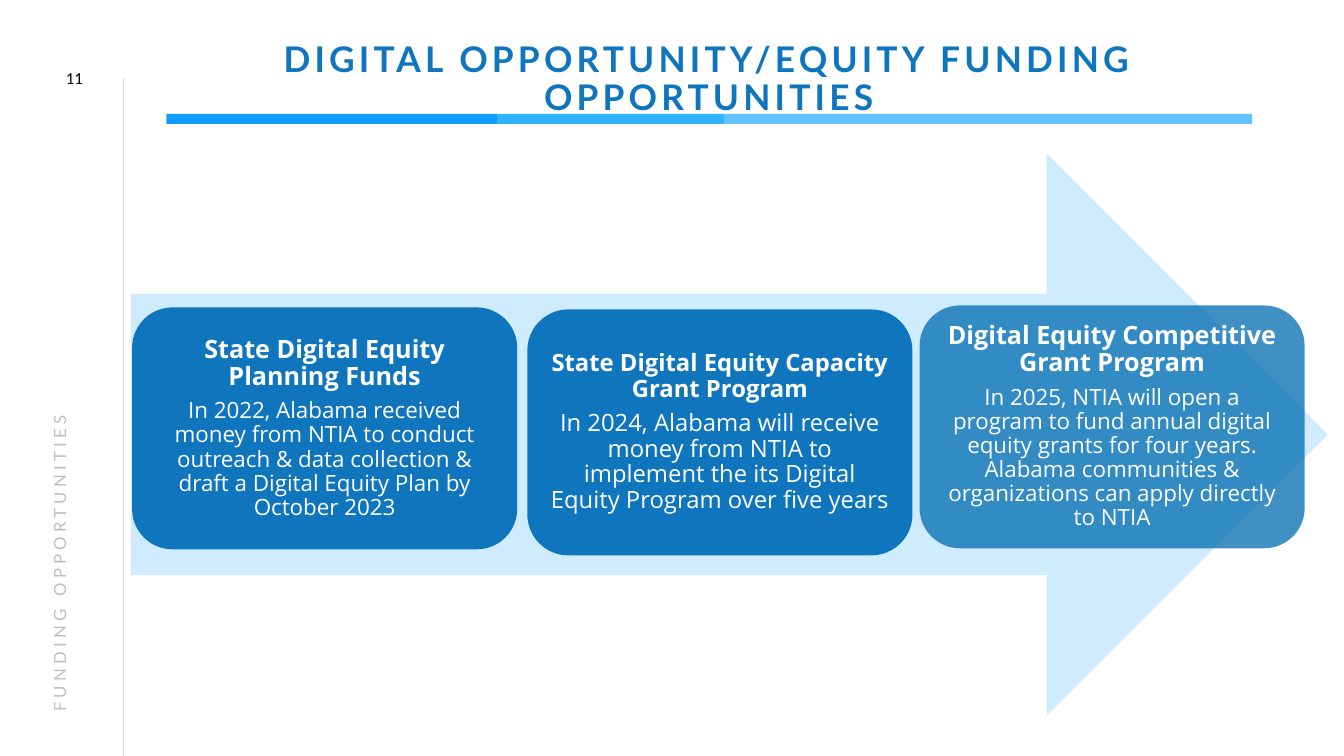
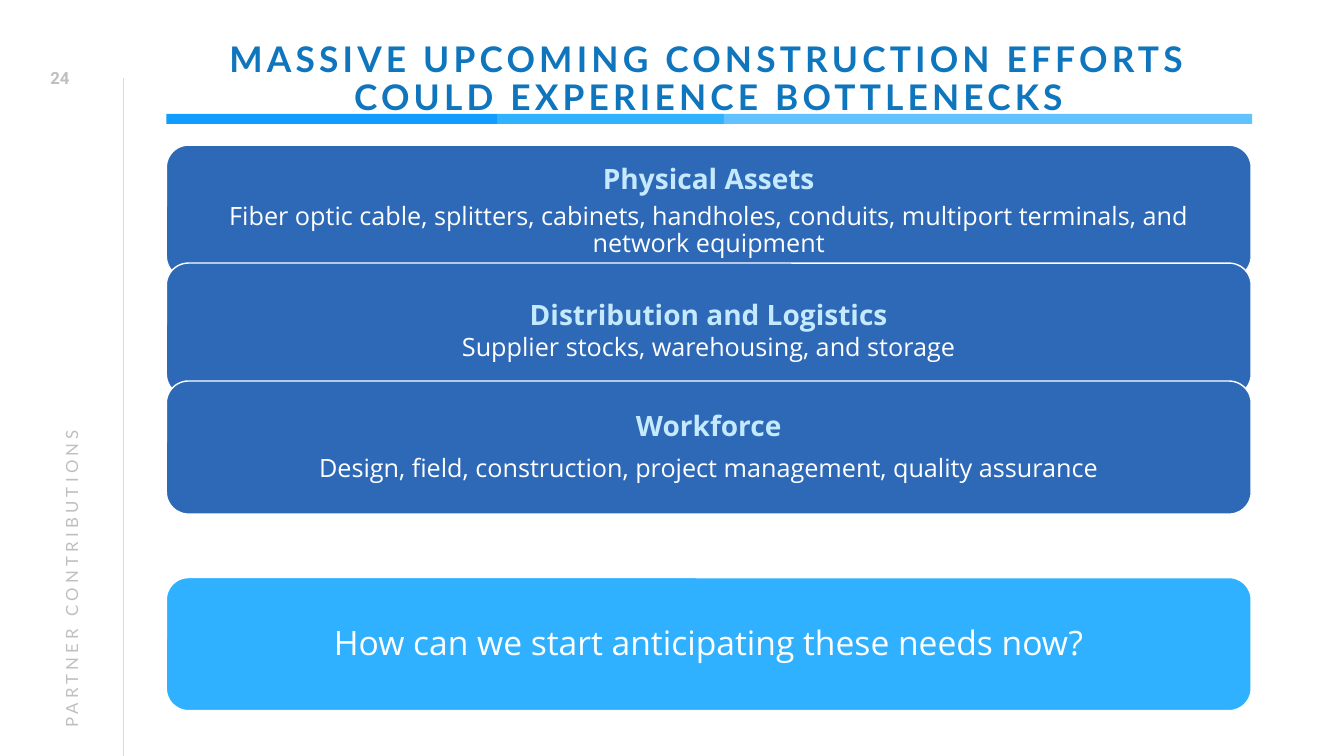
"""Build two slides on digital equity funding and construction bottlenecks."""
import pptx
import pptx.util
import pptx.dml.color
import pptx.enum.shapes
import pptx.enum.text
import pptx.oxml
import pptx.oxml.ns

Inches = pptx.util.Inches
Pt = pptx.util.Pt
RGBColor = pptx.dml.color.RGBColor
SHAPE = pptx.enum.shapes.MSO_SHAPE
ALIGN = pptx.enum.text.PP_ALIGN
ANCHOR = pptx.enum.text.MSO_ANCHOR
qn = pptx.oxml.ns.qn

WHITE = RGBColor(0xFF, 0xFF, 0xFF)
BLACK = RGBColor(0x00, 0x00, 0x00)
RULE_GRAY = RGBColor(0xD9, 0xD9, 0xD9)
LABEL_GRAY = RGBColor(0xBF, 0xBF, 0xBF)
TITLE_BLUE = RGBColor(0x0F, 0x75, 0xBC)
DEEP_BLUE = RGBColor(0x00, 0x6B, 0xB0)
ARROW_BLUE = RGBColor(0xCF, 0xEB, 0xFF)
BAR_BLUE = RGBColor(0x2D, 0x69, 0xB6)
QUESTION_BLUE = RGBColor(0x30, 0xB1, 0xFF)
HEADING_BLUE = RGBColor(0xC5, 0xEA, 0xFF)
BANDS = [
    (1.65, 3.28, RGBColor(0x11, 0x9D, 0xFF)),
    (4.93, 2.25, RGBColor(0x31, 0xB2, 0xFF)),
    (7.18, 5.24, RGBColor(0x62, 0xC1, 0xFF)),
]


def add_block(slide, preset, box, color, outline=None):
    """Add a filled preset shape without shadow."""
    shape = slide.shapes.add_shape(preset, *map(Inches, box))
    shape.shadow.inherit = False
    shape.fill.solid()
    shape.fill.fore_color.rgb = color
    if outline is None:
        shape.line.fill.background()
    else:
        shape.line.color.rgb = outline
        shape.line.width = Pt(1)
    return shape


def write_text(shape, lines, font_name, align, margins, anchor=ANCHOR.MIDDLE,
               spacing=None, gap=0, tracking=0):
    """Write (text, size, color, bold) lines, with a gap between paragraphs."""
    frame = shape.text_frame
    frame.word_wrap = True
    frame.vertical_anchor = anchor
    frame.margin_left, frame.margin_top, frame.margin_right, frame.margin_bottom = map(Inches, margins)
    frame.text = "\n".join(line[0] for line in lines)
    for index, (paragraph, line) in enumerate(zip(frame.paragraphs, lines)):
        paragraph.alignment = align
        paragraph.space_before = Pt(0)
        paragraph.space_after = Pt(gap if index < len(lines) - 1 else 0)
        if spacing:
            paragraph.line_spacing = spacing
        font = paragraph.runs[0].font
        font.name = font_name
        font.size, font.color.rgb, font.bold = Pt(line[1]), line[2], line[3]
    if tracking:
        for properties in shape.element.iter(qn("a:rPr")):
            properties.set("spc", str(tracking * 100))


presentation = pptx.Presentation()
presentation.slide_width = Inches(13.33)
presentation.slide_height = Inches(7.5)
title_layout = presentation.slide_layouts[5]

TEXT_MARGINS = (0.1, 0.05, 0.1, 0.05)
pages = [
    {
        "title": "DIGITAL OPPORTUNITY/EQUITY FUNDING OPPORTUNITIES",
        "number": ("11", 12, BLACK, False), "number_font": "Calibri", "number_align": ALIGN.RIGHT,
        "section": "FUNDING OPPORTUNITIES", "section_at": (-2.42, 3.95), "section_anchor": ANCHOR.MIDDLE,
    },
    {
        "title": "MASSIVE UPCOMING CONSTRUCTION EFFORTS COULD EXPERIENCE BOTTLENECKS",
        "number": ("24", 12, LABEL_GRAY, True), "number_font": "Roboto", "number_align": ALIGN.CENTER,
        "section": "PARTNER CONTRIBUTIONS", "section_at": (-2.25, 4.11), "section_anchor": ANCHOR.TOP,
    },
]
slides = []
for page in pages:
    slide = presentation.slides.add_slide(title_layout)
    slides.append(slide)

    margin_rule = slide.shapes.add_connector(
        pptx.enum.shapes.MSO_CONNECTOR.STRAIGHT, Inches(1.22), Inches(7.5), Inches(1.22), Inches(0.77))
    margin_rule.line.color.rgb = RULE_GRAY
    margin_rule.line.width = Pt(0.5)
    margin_rule.element.spPr.append(pptx.oxml.parse_xml(
        f'<a:effectLst {pptx.oxml.ns.nsdecls("a")}/>'))
    for left, width, color in BANDS:
        add_block(slide, SHAPE.RECTANGLE, (left, 1.13, width, 0.1), color)

    title = slide.shapes.title
    title.left, title.top, title.width, title.height = map(Inches, (1.65, 0.4, 10.76, 0.74))
    write_text(title, [(page["title"], 25.2, TITLE_BLUE, True)], "Lato", ALIGN.CENTER,
               (0, 0.05, 0, 0), spacing=0.9, tracking=3)
    title.text_frame.auto_size = pptx.enum.text.MSO_AUTO_SIZE.NONE

    number = slide.shapes.add_textbox(*map(Inches, (0.27, 0.57, 0.65, 0.4)))
    write_text(number, [page["number"]], page["number_font"], page["number_align"], TEXT_MARGINS)

    section = slide.shapes.add_textbox(*map(Inches, (*page["section_at"], 6.02, 0.4)))
    section.rotation = 270
    write_text(section, [(page["section"], 12, LABEL_GRAY, False)], "Lato", ALIGN.LEFT,
               TEXT_MARGINS, page["section_anchor"], tracking=3)

funding_slide, bottleneck_slide = slides

add_block(funding_slide, SHAPE.RIGHT_ARROW, (1.3, 1.52, 11.87, 5.58), ARROW_BLUE)
programs = [
    (1.31, 3.05, 2.4, TITLE_BLUE, 18, 16, "State Digital Equity Planning Funds",
     "In 2022, Alabama received money from NTIA to conduct outreach & data collection "
     "& draft a Digital Equity Plan by October 2023"),
    (5.23, 3.07, 2.44, TITLE_BLUE, 17, 17, "State Digital Equity Capacity Grant Program",
     "In 2024, Alabama will receive money from NTIA to implement the its Digital Equity "
     "Program over five years"),
    (9.12, 3.03, 2.41, DEEP_BLUE, 18, 16, "Digital Equity Competitive Grant Program",
     "In 2025, NTIA will open a program to fund annual digital equity grants for four years. "
     "Alabama communities & organizations can apply directly to NTIA"),
]
for left, top, height, color, heading_size, body_size, heading, body in programs:
    card = add_block(funding_slide, SHAPE.ROUNDED_RECTANGLE, (left, top, 3.82, height), color)
    write_text(card, [(heading, heading_size, WHITE, True), (body, body_size, WHITE, False)],
               "Open Sans", ALIGN.CENTER, (0.07,) * 4, spacing=0.9, gap=6)
    if color == DEEP_BLUE:
        card_color = card.element.spPr.find(qn("a:solidFill")).find(qn("a:srgbClr"))
        card_color.append(pptx.oxml.parse_xml(
            f'<a:alpha {pptx.oxml.ns.nsdecls("a")} val="75000"/>'))

needs = [
    ("Physical Assets",
     "Fiber optic cable, splitters, cabinets, handholes, conduits, multiport terminals, "
     "and network equipment", 0.9, 6),
    ("Distribution and Logistics", "Supplier stocks, warehousing, and storage", 1.0, 0),
    ("Workforce", "Design, field, construction, project management, quality assurance", 0.9, 10),
]
for index, (heading, body, spacing, gap) in enumerate(needs):
    bar = add_block(bottleneck_slide, SHAPE.ROUNDED_RECTANGLE,
                    (1.65, 1.44 + 1.17 * index, 10.76, 1.32), BAR_BLUE, WHITE)
    write_text(bar, [(heading, 20, HEADING_BLUE, True), (body, 18, WHITE, False)],
               "Open Sans", ALIGN.CENTER, (0.08,) * 4, spacing=spacing, gap=gap)

question = add_block(bottleneck_slide, SHAPE.ROUNDED_RECTANGLE,
                     (1.65, 5.73, 10.76, 1.32), QUESTION_BLUE, WHITE)
write_text(question, [("How can we start anticipating these needs now?", 24, WHITE, False)],
           "Open Sans", ALIGN.CENTER, (0.1,) * 4, spacing=0.9)

presentation.save("out.pptx")
